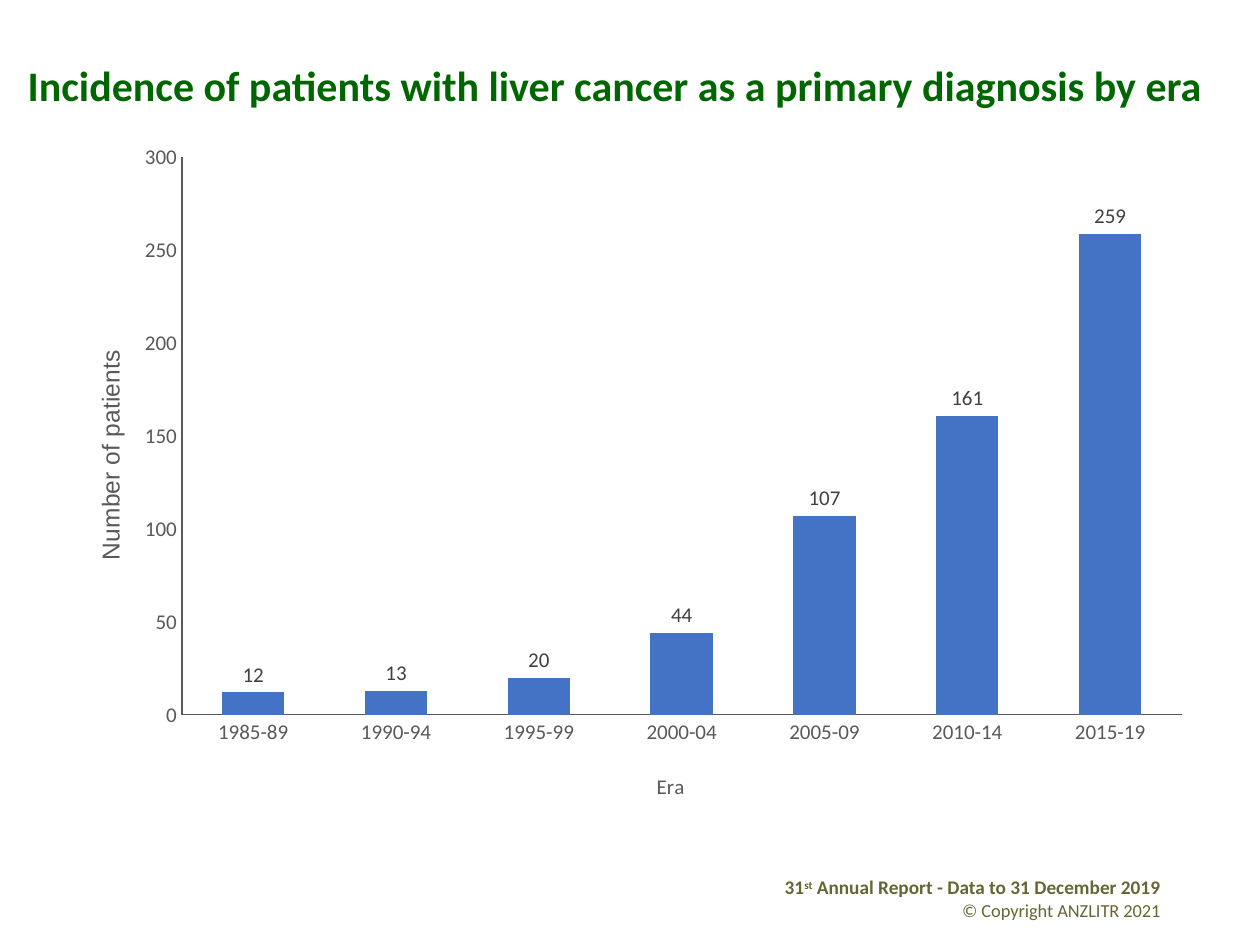
from dataclasses import dataclass

from lxml import etree
from pptx import Presentation
from pptx import util as u
from pptx.chart import data
from pptx.dml import color
from pptx.enum import chart as charts, text
from pptx.oxml import ns


@dataclass(frozen=True)
class Theme:
    heading: str = "006600"
    credit: str = "666633"
    bar: str = "4472C4"
    axis: str = "595959"
    label: str = "404040"
    base: str = "000000"
    body_font: str = "Calibri"
    count_font: str = "Arial"
    title_size: float = 24
    count_size: float = 14
    axis_size: float = 12
    base_size: float = 10
    report_size: float = 11
    copyright_size: float = 10.5


THEME = Theme()
WIDTH, HEIGHT = u.Inches(10), u.Inches(7.5)
ERAS = ["1985-89", "1990-94", "1995-99", "2000-04", "2005-09", "2010-14", "2015-19"]
PATIENTS = [12, 13, 20, 44, 107, 161, 259]


def inches(*lengths):
    return [u.Inches(length) for length in lengths]


def style(font, size, rgb, name=THEME.body_font, bold=False):
    font.size = u.Pt(size)
    font.name = name
    font.bold = bold
    font.color.rgb = color.RGBColor.from_string(rgb)


def add_run(paragraph, wording, size, rgb, name=THEME.body_font, bold=False):
    run = paragraph.add_run()
    run.text = wording
    style(run.font, size, rgb, name, bold)
    return run


def add_title(slide, wording):
    heading = slide.shapes.title
    heading.left, heading.top, heading.width, heading.height = inches(0.12, 0.29, 9.76, 0.74)
    frame = heading.text_frame
    frame.word_wrap = True
    frame.auto_size = text.MSO_AUTO_SIZE.NONE
    frame.vertical_anchor = text.MSO_ANCHOR.MIDDLE
    line = frame.paragraphs[0]
    line.alignment = text.PP_ALIGN.LEFT
    line.line_spacing = 1.07
    add_run(line, wording, THEME.title_size, THEME.heading, bold=True)


def add_footer(slide):
    frame = slide.shapes.add_textbox(*inches(5.89, 6.9, 3.42, 0.4)).text_frame
    frame.word_wrap = True
    report, rights = frame.paragraphs[0], frame.add_paragraph()
    report.alignment = rights.alignment = text.PP_ALIGN.RIGHT
    report_style = dict(size=THEME.report_size, rgb=THEME.credit, bold=True)
    add_run(report, "31", **report_style)
    ordinal = add_run(report, "st", **report_style)
    ordinal.font._element.set("baseline", "30000")
    add_run(report, " Annual Report - Data to 31 December 2019", **report_style)
    add_run(rights, "© Copyright ANZLITR 2021", THEME.copyright_size, THEME.credit)


def place(layout, **settings):
    manual = etree.SubElement(layout, ns.qn("c:manualLayout"))
    for key, value in settings.items():
        etree.SubElement(manual, ns.qn(f"c:{key}")).set("val", str(value))


def place_in(parent, position, **settings):
    layout = parent.find(ns.qn("c:layout"))
    if layout is None:
        layout = etree.Element(ns.qn("c:layout"))
        parent.insert(position, layout)
    place(layout, **settings)


def format_axis(axis, wording, size, font, left, top):
    axis.has_major_gridlines = False
    axis.major_tick_mark = axis.minor_tick_mark = charts.XL_TICK_MARK.NONE
    style(axis.tick_labels.font, THEME.axis_size, THEME.axis)
    axis.format.line.width = u.Pt(0.75)
    axis.format.line.color.rgb = color.RGBColor.from_string(THEME.axis)
    caption = axis.axis_title
    add_run(caption.text_frame.paragraphs[0], wording, size, THEME.axis, font)
    place_in(caption._element, 1, xMode="edge", yMode="edge", x=left, y=top)


def add_incidence_chart(slide):
    incidence = data.CategoryChartData()
    incidence.categories = ERAS
    incidence.add_series("Series 1", PATIENTS)
    chart = slide.shapes.add_chart(
        charts.XL_CHART_TYPE.COLUMN_CLUSTERED, *inches(0.44, 1.09, 9.12, 5.33), incidence
    ).chart
    chart.has_legend = chart.has_title = False
    style(chart.font, THEME.base_size, THEME.base)

    format_axis(chart.category_axis, "Era", THEME.axis_size, THEME.body_font, 0.52, 0.94)
    counts = chart.value_axis
    format_axis(counts, "Number of patients", THEME.count_size, THEME.count_font, 0.03, 0.31)
    counts.minimum_scale, counts.maximum_scale, counts.major_unit = 0, 300, 50

    columns = chart.plots[0]
    columns.gap_width = 129
    columns.vary_by_categories = False
    bars = columns.series[0]
    bars.format.fill.solid()
    bars.format.fill.fore_color.rgb = color.RGBColor.from_string(THEME.bar)
    labels = bars.data_labels
    labels.show_value = True
    labels.position = charts.XL_LABEL_POSITION.OUTSIDE_END
    style(labels.font, THEME.axis_size, THEME.label)

    plot_area = chart._chartSpace.chart.plotArea
    place_in(plot_area, 0, layoutTarget="inner", xMode="edge", yMode="edge",
             x=0.11, y=0.03, w=0.87, h=0.83)


def main():
    deck = Presentation()
    deck.slide_width, deck.slide_height = WIDTH, HEIGHT
    slide = deck.slides.add_slide(deck.slide_layouts[5])
    add_footer(slide)
    add_title(slide, "Incidence of patients with liver cancer as a primary diagnosis by era")
    add_incidence_chart(slide)
    deck.save("out.pptx")


if __name__ == "__main__":
    main()
